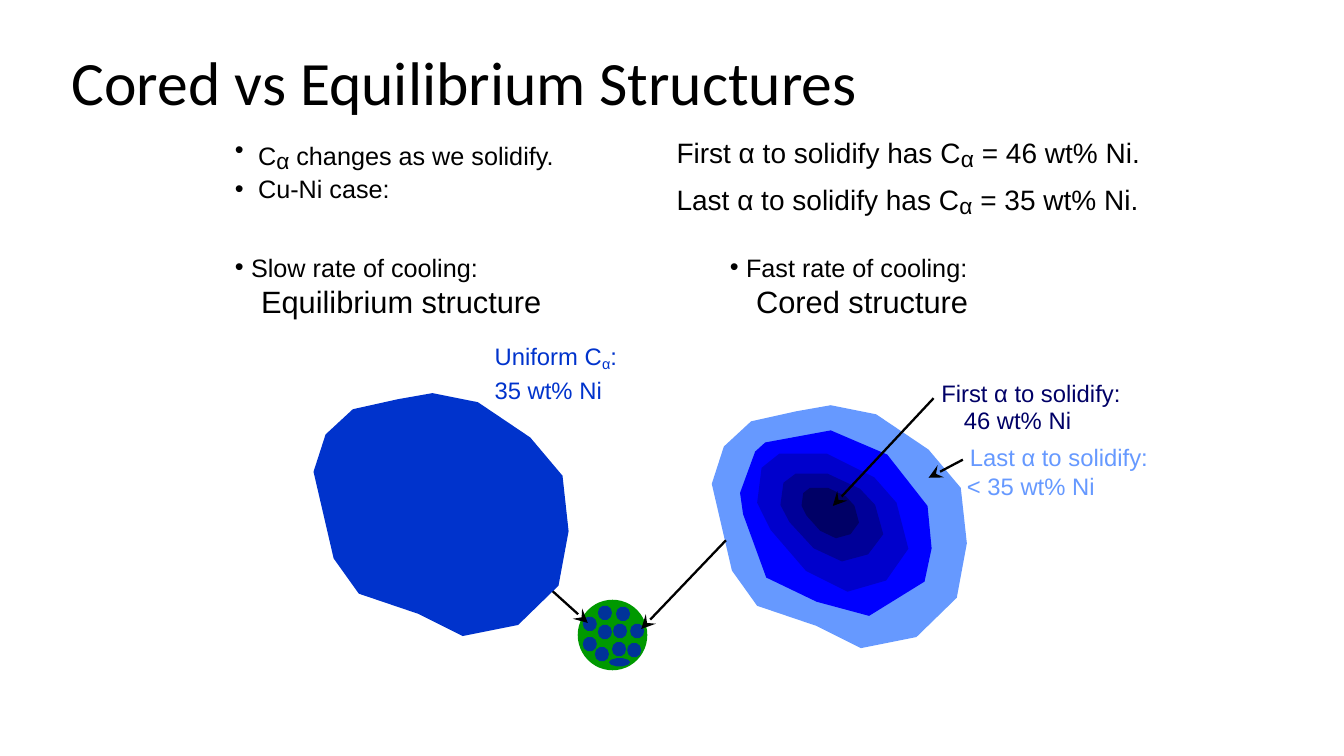
import math

from lxml import etree
from pptx import Presentation
from pptx import util as u
from pptx.dml.color import RGBColor
from pptx.enum import shapes, text
from pptx.oxml import ns

BLACK, EQUILIBRIUM, RIM, CORE = "000000", "0033CC", "6699FF", "000066"

CORED_OUTLINE = [
    (7.9, 4.08), (7.45, 4.18), (7.18, 4.43), (7.06, 4.8), (7.26, 5.66), (7.51, 6.01),
    (8.1, 6.21), (8.54, 6.43), (9.09, 6.32), (9.49, 5.93), (9.59, 5.39), (9.53, 4.84),
    (9.21, 4.46), (8.69, 4.11), (8.24, 4.02)]
EQUILIBRIUM_OUTLINE = [(x - 3.95, y - 0.12) for x, y in CORED_OUTLINE]
MIDDLE_OUTLINE = [
    (8.8, 4.51), (8.24, 4.27), (7.59, 4.39), (7.49, 4.48), (7.34, 4.89), (7.37, 5.1),
    (7.6, 5.73), (8.1, 5.97), (8.62, 6.11), (9.17, 5.77), (9.24, 5.44), (9.2, 5.02)]
INNER_OUTLINE = [
    (7.83, 5.18), (8.07, 5.44), (8.35, 5.57), (8.61, 5.5), (8.76, 5.3), (8.68, 5.01),
    (8.53, 4.85), (8.21, 4.7), (7.89, 4.7), (7.77, 4.79), (7.74, 5.01)]
INNER_LAYERS = [
    ("0000CC", (7.51, 4.5, 1.5, 1.37)),
    ("000099", (7.74, 4.7, 1.02, 0.87)),
    (CORE, (7.95, 4.84, 0.57, 0.5))]

SMALL_OUTLINE = [(math.cos(step * math.pi / 5), math.sin(step * math.pi / 5))
                 for step in range(10)]
SMALL_GRAIN_CENTERS = [
    (6, 6.08), (6.18, 6.09), (6.32, 6.26), (6.29, 6.45), (6.15, 6.26), (6, 6.27),
    (5.85, 6.19), (5.85, 6.39), (5.97, 6.49), (6.14, 6.44)]
SMALL_GRAIN_SIZE = 0.14


def fit(points, box):
    left, top, width, height = box
    xs, ys = zip(*points)
    x_scale = width / (max(xs) - min(xs))
    y_scale = height / (max(ys) - min(ys))
    return [(left + (x - min(xs)) * x_scale, top + (y - min(ys)) * y_scale)
            for x, y in points]


def color(hex_value):
    return RGBColor.from_string(hex_value)


def write(paragraph, content, size=18, hex_value=BLACK, font="Arial",
          sub_size=28, sub_shift=-10, indent=0.0, bullet=False):
    paragraph.alignment = text.PP_ALIGN.LEFT
    paragraph.space_before = u.Pt(0)
    properties = paragraph._p.get_or_add_pPr()
    properties.set("marL", str(u.Inches(indent)))
    properties.set("indent", str(-u.Inches(indent) if bullet else 0))
    if bullet:
        etree.SubElement(properties, ns.qn("a:buFont")).set("typeface", "Arial")
        etree.SubElement(properties, ns.qn("a:buChar")).set("char", "•")
    else:
        etree.SubElement(properties, ns.qn("a:buNone"))
    for index, part in enumerate(content.split("|")):
        is_subscript = index % 2 == 1
        run = paragraph.add_run()
        run.text = part
        run.font.name = font
        run.font.size = u.Pt(sub_size if is_subscript else size)
        run.font.bold = False
        run.font.color.rgb = color(hex_value)
        if is_subscript:
            run._r.get_or_add_rPr().set("baseline", str(sub_shift * 1000))


class SlideBuilder:
    arrow_width = 1.63

    def __init__(self, presentation):
        self.slide = presentation.slides.add_slide(presentation.slide_layouts[4])
        self.shapes = self.slide.shapes

    def place(self, shape, box):
        shape.left, shape.top, shape.width, shape.height = map(u.Inches, box)

    def clear_margins(self, frame):
        frame.margin_left = frame.margin_right = frame.margin_top = frame.margin_bottom = 0

    def title(self, content, box):
        shape = self.shapes.title
        self.place(shape, box)
        shape.text_frame.vertical_anchor = text.MSO_ANCHOR.MIDDLE
        paragraph = shape.text_frame.paragraphs[0]
        write(paragraph, content, size=44, font="Calibri")
        paragraph.line_spacing = 0.9

    def body(self, index, box, lines):
        shape = self.slide.placeholders[index]
        self.place(shape, box)
        frame = shape.text_frame
        self.clear_margins(frame)
        frame.word_wrap = True
        frame.auto_size = text.MSO_AUTO_SIZE.NONE
        frame.vertical_anchor = text.MSO_ANCHOR.TOP
        for number, (content, style) in enumerate(lines):
            paragraph = frame.add_paragraph() if number else frame.paragraphs[0]
            write(paragraph, content, **style)

    def label(self, content, box, hex_value):
        frame = self.shapes.add_textbox(*map(u.Inches, box)).text_frame
        self.clear_margins(frame)
        frame.word_wrap = False
        frame.auto_size = text.MSO_AUTO_SIZE.SHAPE_TO_FIT_TEXT
        write(frame.paragraphs[0], content, size=17, hex_value=hex_value,
              sub_size=18, sub_shift=-16)

    def paint(self, shape, hex_value):
        shape.shadow.inherit = False
        shape.fill.solid()
        shape.fill.fore_color.rgb = color(hex_value)
        shape.line.fill.background()

    def grain(self, points, hex_value):
        start, *others = [(u.Inches(x), u.Inches(y)) for x, y in points]
        builder = self.shapes.build_freeform(*start)
        builder.add_line_segments(others, close=True)
        self.paint(builder.convert_to_shape(), hex_value)

    def ellipse(self, box, hex_value):
        shape = self.shapes.add_shape(shapes.MSO_SHAPE.OVAL, *map(u.Inches, box))
        self.paint(shape, hex_value)

    def arrow(self, start, end):
        connector = self.shapes.add_connector(
            shapes.MSO_CONNECTOR.STRAIGHT, *map(u.Inches, start + end))
        connector.line.color.rgb = color(BLACK)
        connector.line.width = u.Pt(self.arrow_width)
        head = etree.SubElement(connector.line._get_or_add_ln(), ns.qn("a:tailEnd"))
        for name, value in (("type", "stealth"), ("w", "lg"), ("len", "lg")):
            head.set(name, value)
        etree.SubElement(connector._element.spPr, ns.qn("a:effectLst"))


def main():
    presentation = Presentation()
    presentation.slide_width, presentation.slide_height = u.Inches(13.33), u.Inches(7.5)
    builder = SlideBuilder(presentation)

    builder.title("Cored vs Equilibrium Structures", (0.61, 0.12, 11.5, 1.45))
    wide_bullet = {"bullet": True, "indent": 0.23}
    builder.body(1, (2.33, 1.25, 4.3, 0.8), [
        ("C|α| changes as we solidify.", wide_bullet), ("Cu-Ni case:", wide_bullet)])
    builder.body(3, (6.71, 1.23, 4.75, 0.95), [
        (f"{order} α to solidify has C|α| = {percent} wt% Ni.", {"size": 20})
        for order, percent in (("First", 46), ("Last", 35))])
    for index, left, rate, structure in ((2, 2.33, "Slow", "Equilibrium"),
                                         (4, 7.24, "Fast", "Cored")):
        builder.body(index, (left, 2.5, 3.58, 0.67), [
            (f"{rate} rate of cooling:", {"bullet": True, "indent": 0.16}),
            (f"{structure} structure", {"size": 22, "indent": 0.26})])

    builder.grain(CORED_OUTLINE, RIM)
    builder.grain(MIDDLE_OUTLINE, "0000FF")
    for hex_value, box in INNER_LAYERS:
        builder.grain(fit(INNER_OUTLINE, box), hex_value)
    builder.arrow((9.26, 3.95), (8.26, 5.02))
    builder.arrow((9.55, 4.56), (9.21, 4.74))
    builder.label(" First α to solidify:", (9.27, 3.76, 1.88, 0.29), CORE)
    builder.label("46 wt% Ni", (9.56, 4.02, 1.07, 0.29), CORE)
    builder.label("Last α to solidify:", (9.62, 4.39, 1.8, 0.29), RIM)
    builder.label("< 35 wt% Ni", (9.59, 4.68, 1.28, 0.29), RIM)

    builder.ellipse((5.73, 5.95, 0.69, 0.7), "009900")
    small_boxes = [(x - SMALL_GRAIN_SIZE / 2, y - SMALL_GRAIN_SIZE / 2,
                    SMALL_GRAIN_SIZE, SMALL_GRAIN_SIZE) for x, y in SMALL_GRAIN_CENTERS]
    for box in small_boxes + [(6.04, 6.53, 0.21, 0.08)]:
        builder.grain(fit(SMALL_OUTLINE, box), "003399")
    builder.arrow((5.01, 5.44), (5.83, 6.18))
    builder.arrow((7.2, 5.36), (6.36, 6.24))

    builder.grain(EQUILIBRIUM_OUTLINE, EQUILIBRIUM)
    builder.label(" Uniform C|α|:", (4.84, 3.38, 1.31, 0.29), EQUILIBRIUM)
    builder.label(" 35 wt% Ni", (4.84, 3.73, 1.14, 0.29), EQUILIBRIUM)
    presentation.save("out.pptx")


if __name__ == "__main__":
    main()
